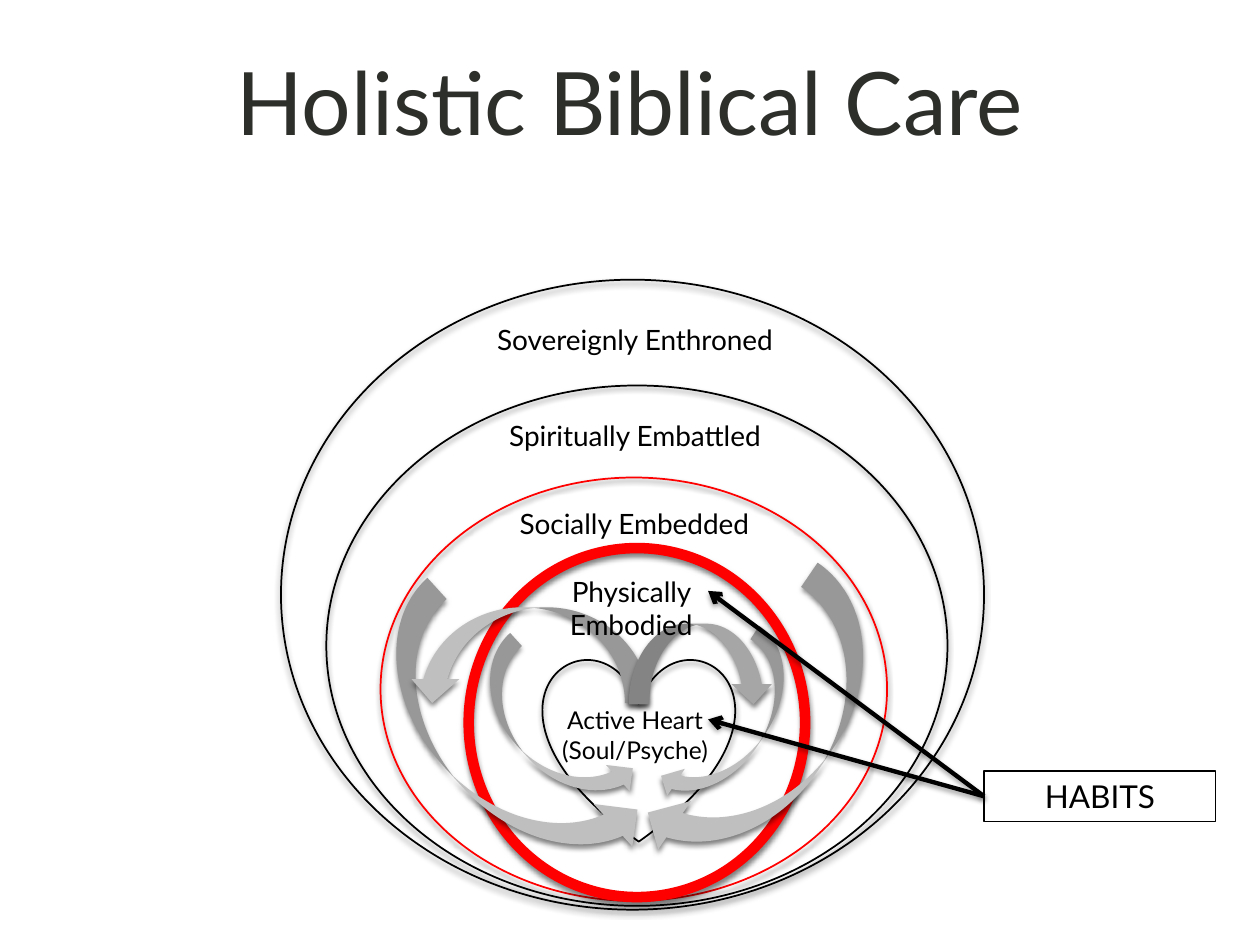
from lxml import etree
from pptx import Presentation
from pptx import util as u
from pptx.dml.color import RGBColor
from pptx.enum import shapes, text
from pptx.oxml import ns

BLACK = RGBColor(0x00, 0x00, 0x00)
RED = RGBColor(0xFF, 0x00, 0x00)
CHARCOAL = RGBColor(0x2D, 0x2F, 0x2B)
SILVER = RGBColor(0xBF, 0xBF, 0xBF)
GRAY = RGBColor(0xA6, 0xA6, 0xA6)
OVAL = shapes.MSO_SHAPE.OVAL
HEART = shapes.MSO_SHAPE.HEART


class CareSlide:
    font_name = "Lato"

    def __init__(self, presentation):
        self.slide = presentation.slides.add_slide(presentation.slide_layouts[5])

    def set_text(self, shape, lines, size, color=BLACK):
        frame = shape.text_frame
        frame.word_wrap = True
        frame.auto_size = text.MSO_AUTO_SIZE.NONE
        frame.text = "\n".join(lines)
        for paragraph in frame.paragraphs:
            paragraph.alignment = text.PP_ALIGN.CENTER
            paragraph.font.name = self.font_name
            paragraph.font.size = u.Pt(size)
            paragraph.font.color.rgb = color

    def shade(self, shape, opacity=50, blur=3, distance=2):
        effects = etree.SubElement(shape._element.spPr, ns.qn("a:effectLst"))
        shadow = etree.SubElement(
            effects, ns.qn("a:outerShdw"), blurRad=str(u.Pt(blur)),
            dist=str(u.Pt(distance)), dir="5400000", rotWithShape="0")
        color = etree.SubElement(shadow, ns.qn("a:srgbClr"), val=str(BLACK))
        etree.SubElement(color, ns.qn("a:alpha"), val=str(opacity * 1000))

    def title(self, words, bounds, size):
        title = self.slide.shapes.title
        title.left, title.top, title.width, title.height = map(u.Inches, bounds)
        self.set_text(title, [words], size, CHARCOAL)
        title.text_frame.vertical_anchor = text.MSO_ANCHOR.MIDDLE

    def label(self, lines, bounds, size=16):
        box = self.slide.shapes.add_textbox(*map(u.Inches, bounds))
        self.set_text(box, lines, size)

    def outline(self, kind, bounds, color=BLACK, width=1):
        shape = self.slide.shapes.add_shape(kind, *map(u.Inches, bounds))
        shape.fill.background()
        shape.line.color.rgb = color
        shape.line.width = u.Pt(width)
        self.shade(shape)

    def curved_arrow(self, bounds, rotation=0, flips="", color=SILVER):
        shape = self.slide.shapes.add_shape(
            shapes.MSO_SHAPE.CURVED_DOWN_ARROW, *map(u.Inches, bounds))
        shape.rotation = rotation
        for axis in flips:
            shape._element.spPr.xfrm.set("flip" + axis, "1")
        shape.fill.solid()
        shape.fill.fore_color.rgb = color
        shape.line.fill.background()
        self.shade(shape)

    def callout(self, words, bounds):
        box = self.slide.shapes.add_shape(
            shapes.MSO_SHAPE.RECTANGLE, *map(u.Inches, bounds))
        box.shadow.inherit = False
        box.fill.background()
        box.line.color.rgb = BLACK
        box.line.width = u.Pt(0.75)
        self.set_text(box, [words], 18)

    def pointer(self, start, end):
        connector = self.slide.shapes.add_connector(
            shapes.MSO_CONNECTOR.STRAIGHT, *map(u.Inches, start + end))
        connector.line.color.rgb = BLACK
        connector.line.width = u.Pt(2.5)
        line = connector._element.spPr.find(ns.qn("a:ln"))
        etree.SubElement(line, ns.qn("a:tailEnd"), type="arrow")
        self.shade(connector, 38, 3.1, 1.6)


def main():
    presentation = Presentation()
    presentation.slide_width = u.Inches(10)
    presentation.slide_height = u.Inches(7.5)
    care = CareSlide(presentation)

    care.title("Holistic Biblical Care", (0.75, 0.05, 8.5, 1.5), 50)
    care.outline(OVAL, (3.02, 3.79, 4.02, 3.36), RED)
    care.outline(OVAL, (3.72, 4.35, 2.67, 2.77), RED, 6)
    care.outline(HEART, (4.31, 5.22, 1.52, 1.46))
    care.label(["Socially Embedded"], (3.46, 3.97, 3.15, 0.37))
    care.label(["Active Heart", "(Soul/Psyche)"], (4.22, 5.55, 1.64, 0.57), 14)
    care.outline(OVAL, (2.23, 2.22, 5.58, 5))
    care.label(["Sovereignly Enthroned"], (3.43, 2.51, 3.22, 0.37))
    care.outline(OVAL, (2.59, 3.06, 4.93, 4.13))
    care.label(["Spiritually Embattled"], (3.43, 3.27, 3.22, 0.37))

    care.curved_arrow((3.58, 5.52, 1.59, 0.56), 227.8, "H")
    care.curved_arrow((2.61, 5.44, 2.71, 0.91), 227.8, "H")
    care.curved_arrow((3.24, 4.82, 1.91, 0.76), flips="H")
    care.curved_arrow((5.04, 5.5, 1.55, 0.51), 303.2, "HV")
    care.curved_arrow((4.99, 4.95, 1.15, 0.64), color=GRAY)
    care.label(["Physically Embodied"], (4.19, 4.51, 1.64, 0.64))
    care.curved_arrow((4.82, 5.35, 2.63, 0.93), 304.2, "HV")

    care.callout("HABITS", (7.81, 6.12, 1.84, 0.4))
    for target_y in (5.71, 4.69):
        care.pointer((7.81, 6.32), (5.62, target_y))

    presentation.save("out.pptx")


if __name__ == "__main__":
    main()
